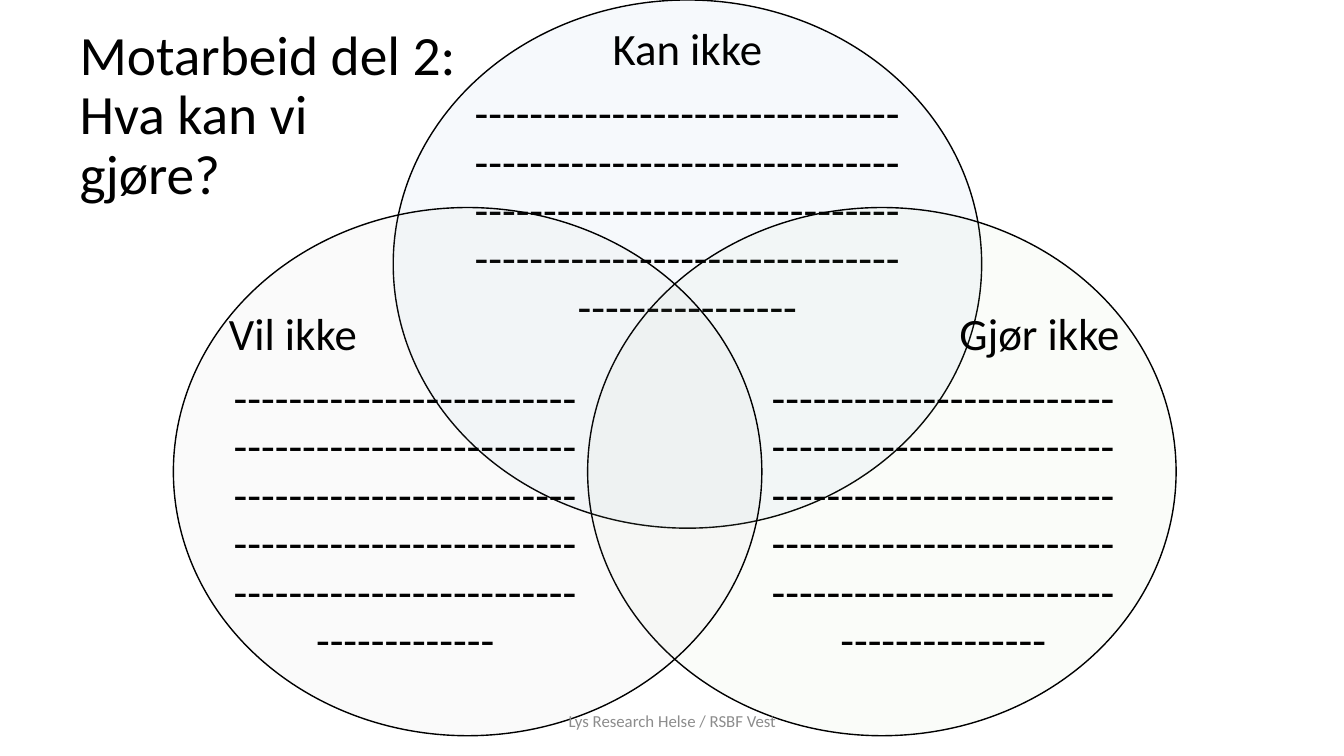
from dataclasses import dataclass

from lxml import etree
from pptx import Presentation
from pptx.dml.color import RGBColor
from pptx.enum import shapes, text
from pptx.oxml import ns
from pptx.util import Cm, Pt


@dataclass(frozen=True)
class Theme:
    font: str = "Calibri"
    ink: str = "000000"
    muted: str = "8C8C8C"
    blue: str = "5B9BD5"
    green: str = "A9D18E"
    grey: str = "AFABAB"
    title_size: float = 39.6
    body_size: float = 32
    footer_size: float = 12
    fill_opacity: int = 5


THEME = Theme()
CIRCLE_WIDTH, CIRCLE_HEIGHT = 14.83, 13.31
LEFT, CENTRE, RIGHT = text.PP_ALIGN.LEFT, text.PP_ALIGN.CENTER, text.PP_ALIGN.RIGHT


def place(shape, box):
    shape.left, shape.top, shape.width, shape.height = (Cm(value) for value in box)


def write(paragraph, content, size=THEME.body_size, color=THEME.ink,
          align=LEFT, line_spacing=0.9, space_after=0):
    paragraph.text = content
    paragraph.alignment = align
    paragraph.line_spacing = line_spacing
    paragraph.space_before = Pt(0)
    paragraph.space_after = Pt(space_after)
    for run in paragraph.runs:
        run.font.name = THEME.font
        run.font.size = Pt(size)
        run.font.color.rgb = RGBColor.from_string(color)


def prepare_frame(frame):
    frame.word_wrap = True
    frame.auto_size = text.MSO_AUTO_SIZE.NONE
    frame.vertical_anchor = text.MSO_ANCHOR.MIDDLE


def add_circle(group, box, color):
    circle = group.shapes.add_shape(
        shapes.MSO_SHAPE.OVAL, *(Cm(value) for value in box))
    circle.shadow.inherit = False
    circle.fill.solid()
    circle.fill.fore_color.rgb = RGBColor.from_string(color)
    # Transparent fill lets the overlaps show
    fill_color = circle.element.spPr.find(".//" + ns.qn("a:srgbClr"))
    alpha = etree.SubElement(fill_color, ns.qn("a:alpha"))
    alpha.set("val", str(THEME.fill_opacity * 1000))
    circle.line.color.rgb = RGBColor.from_string(THEME.ink)
    circle.line.width = Pt(1)


def add_venn_part(group, box, color, heading, dashes, text_box,
                  align=LEFT, bottom_inset=0):
    """Draw a circle and its text; text_box is relative to the circle's corner."""
    add_circle(group, box, color)
    left, top, width, height = text_box
    label = group.shapes.add_textbox(
        Cm(box[0] + left), Cm(box[1] + top), Cm(width), Cm(height))
    frame = label.text_frame
    prepare_frame(frame)
    frame.margin_left = frame.margin_right = frame.margin_top = 0
    frame.margin_bottom = Cm(bottom_inset)
    gap = 0.35 * THEME.body_size
    write(frame.paragraphs[0], heading, align=align, space_after=gap)
    write(frame.add_paragraph(), "-" * dashes, align=CENTRE, space_after=gap)


def add_venn(slide, left, top):
    group = slide.shapes.add_group_shape()
    size = (CIRCLE_WIDTH, CIRCLE_HEIGHT)
    lower = top + 5.23
    add_venn_part(group, (left + 5.54, top, *size), THEME.blue, "Kan ikke", 140,
                  (1.98, 2.34, 10.87, 5.99), align=CENTRE, bottom_inset=1.6)
    add_venn_part(group, (left + 10.44, lower, *size), THEME.green, "Gjør ikke", 140,
                  (4.52, 3.43, 8.89, 7.32), align=RIGHT)
    add_venn_part(group, (left, lower, *size), THEME.grey, "Vil ikke", 138,
                  (1.4, 3.43, 8.89, 7.32))


def add_footer(slide, box):
    footer = slide.shapes.add_textbox(*(Cm(value) for value in box))
    prepare_frame(footer.text_frame)
    write(footer.text_frame.paragraphs[0], "Lys Research Helse / RSBF Vest",
          size=THEME.footer_size, color=THEME.muted, align=CENTRE, line_spacing=1)


def add_title(slide, box):
    title = slide.shapes.title
    place(title, box)
    prepare_frame(title.text_frame)
    write(title.text_frame.paragraphs[0], "Motarbeid del 2:\vHva kan vi \vgjøre?",
          size=THEME.title_size)
    # Bring the title in front of the circles
    slide.shapes.element.append(title.element)


def main():
    presentation = Presentation()
    presentation.slide_width, presentation.slide_height = Cm(33.87), Cm(19.05)
    slide = presentation.slides.add_slide(presentation.slide_layouts[5])
    add_venn(slide, 4.37, 0)
    add_footer(slide, (11.23, 17.65, 11.43, 1.02))
    add_title(slide, (1.75, 1.22, 22.61, 3.45))
    presentation.save("out.pptx")


if __name__ == "__main__":
    main()
